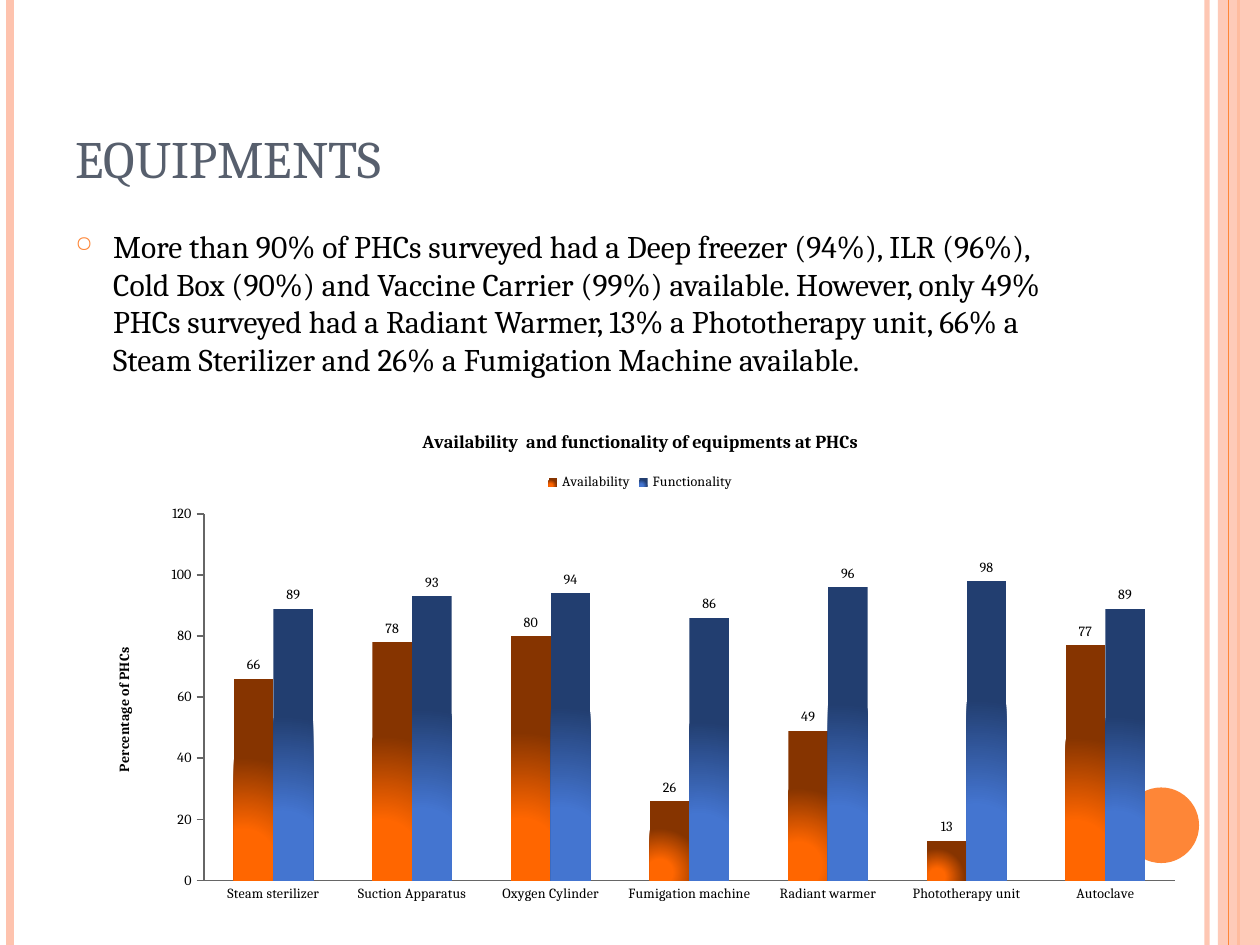
from lxml.etree import SubElement, fromstring
from pptx import Presentation
from pptx.chart.data import CategoryChartData
from pptx.dml.color import RGBColor
from pptx.enum.chart import XL_CHART_TYPE, XL_LABEL_POSITION, XL_LEGEND_POSITION, XL_TICK_MARK
from pptx.enum.shapes import MSO_CONNECTOR, MSO_SHAPE
from pptx.enum.text import MSO_ANCHOR
from pptx.oxml.ns import qn
from pptx.util import Pt

# Content
FONT = "Cambria"
TITLE = "EQUIPMENTS"
BODY = ("More than 90% of PHCs surveyed had a Deep freezer (94%), ILR (96%), Cold Box (90%) "
        "and Vaccine Carrier (99%) available. However, only 49% PHCs surveyed had a Radiant "
        "Warmer, 13% a Phototherapy unit, 66% a Steam Sterilizer and 26% a Fumigation Machine "
        "available.")
CHART_TITLE = "Availability  and functionality of equipments at PHCs"
AXIS_TITLE = "Percentage of PHCs"
CATEGORIES = ["Steam sterilizer", "Suction Apparatus", "Oxygen Cylinder", "Fumigation machine",
              "Radiant warmer", "Phototherapy unit", "Autoclave"]
# name, values, inner and outer gradient colours
SERIES = [("Availability", [66, 78, 80, 26, 49, 13, 77], "FF6600", "863400"),
          ("Functionality", [89, 93, 94, 86, 96, 98, 89], "4475D0", "223E70")]
# x, colour, width, opacity in percent
LINES_BEHIND = [(689.76, "FEC3AE", 3, 93), (5.76, "FEC3AE", 4.5, 100), (707.76, "FE8637", 1.5, 100)]
LINES_FRONT = [(702, "FE8637", 0.75, 100)]
WIDTH, HEIGHT = 720, 540


def color(code):
    return RGBColor.from_string(code)


def set_opacity(element, percent):
    if percent < 100:
        SubElement(element.find(".//" + qn("a:srgbClr")), qn("a:alpha"), val=str(percent * 1000))


def add_rule(x, code, width, opacity):
    line = page.shapes.add_connector(MSO_CONNECTOR.STRAIGHT, Pt(x), Pt(0), Pt(x), Pt(HEIGHT))
    line.line.color.rgb = color(code)
    line.line.width = Pt(width)
    set_opacity(line._element.spPr, opacity)
    SubElement(line._element.spPr, qn("a:effectLst"))


def add_plain_shape(kind, left, top, width, height, code, opacity=100):
    shape = page.shapes.add_shape(kind, Pt(left), Pt(top), Pt(width), Pt(height))
    shape.shadow.inherit = False
    shape.fill.solid()
    shape.fill.fore_color.rgb = color(code)
    shape.line.fill.background()
    set_opacity(shape._element.spPr, opacity)


def style_font(font, size, code="000000", bold=False):
    font.name, font.size, font.bold = FONT, Pt(size), bold
    font.color.rgb = color(code)


def add_text(text, left, top, width, height, size, code="000000", anchor=MSO_ANCHOR.TOP):
    box = page.shapes.add_textbox(Pt(left), Pt(top), Pt(width), Pt(height))
    box.text_frame.word_wrap = True
    box.text_frame.vertical_anchor = anchor
    para = box.text_frame.paragraphs[0]
    span = para.add_run()
    span.text = text
    style_font(span.font, size, code)
    return para


def add_bullet(para, mark, code, percent, indent):
    props = para._p.get_or_add_pPr()
    props.set("marL", str(Pt(indent)))
    props.set("indent", str(-Pt(indent)))
    SubElement(SubElement(props, qn("a:buClr")), qn("a:srgbClr"), val=code)
    SubElement(props, qn("a:buSzPct"), val=str(percent * 1000))
    SubElement(props, qn("a:buChar"), char=mark)


def set_layout(parent, index, **places):
    """Place a chart part by fractions of the chart area."""
    for old in parent.findall(qn("c:layout")):
        parent.remove(old)
    layout = parent.makeelement(qn("c:layout"))
    parent.insert(index, layout)
    manual = SubElement(layout, qn("c:manualLayout"))
    if "w" in places:
        SubElement(manual, qn("c:layoutTarget"), val="inner")
    for mode in ("xMode", "yMode"):
        SubElement(manual, qn("c:" + mode), val="edge")
    for name, value in places.items():
        SubElement(manual, qn("c:" + name), val=str(value))


def fill_radial(series, inner, outer):
    series.format.fill.solid()
    solid = series._element.spPr.find(qn("a:solidFill"))
    stops = "".join(f'<a:gs pos="{place}"><a:srgbClr val="{code}"/></a:gs>'
                    for place, code in ((0, inner), (30000, inner), (100000, outer)))
    gradient = fromstring(
        '<a:gradFill xmlns:a="http://schemas.openxmlformats.org/drawingml/2006/main">'
        f'<a:gsLst>{stops}</a:gsLst><a:path path="circle">'
        '<a:fillToRect l="25000" t="90000" r="75000" b="10000"/></a:path></a:gradFill>')
    solid.getparent().replace(solid, gradient)


def set_title(title, text, size):
    para = title.text_frame.paragraphs[0]
    span = para.add_run()
    span.text = text
    style_font(span.font, size, bold=True)


def add_equipment_chart(left, top, width, height):
    data = CategoryChartData(number_format="0")
    data.categories = CATEGORIES
    for name, values, *_ in SERIES:
        data.add_series(name, values)
    chart = page.shapes.add_chart(XL_CHART_TYPE.COLUMN_CLUSTERED, Pt(left), Pt(top),
                                  Pt(width), Pt(height), data).chart
    style_font(chart.font, 8)
    chart.has_title = True
    set_title(chart.chart_title, CHART_TITLE, 10.5)
    chart.has_legend = True
    chart.legend.position = XL_LEGEND_POSITION.TOP
    chart.legend.include_in_layout = False
    set_layout(chart._chartSpace.chart.plotArea, 0, x=0.108, y=0.207, w=0.872, h=0.728)

    # Axes
    for axis in (chart.category_axis, chart.value_axis):
        axis.has_major_gridlines = False
        axis.format.line.color.rgb = color("666666")
        axis.format.line.width = Pt(1)
    chart.category_axis.major_tick_mark = XL_TICK_MARK.NONE
    values = chart.value_axis
    values.major_tick_mark = XL_TICK_MARK.OUTSIDE
    values.minimum_scale, values.maximum_scale, values.major_unit = 0, 120, 20
    set_title(values.axis_title, AXIS_TITLE, 8)
    title = values.axis_title._element
    title.find(".//" + qn("a:bodyPr")).set("rot", "-5400000")
    set_layout(title, 1, x=0.025, y=0.467)

    # Columns and value labels
    plot = chart.plots[0]
    plot.vary_by_categories = False
    plot.gap_width, plot.overlap = 150, 0
    for series, (_, _, inner, outer) in zip(plot.series, SERIES):
        fill_radial(series, inner, outer)
        labels = series.data_labels
        labels.show_value = True
        labels.number_format, labels.number_format_is_linked = "0", False
        labels.position = XL_LABEL_POSITION.OUTSIDE_END
        style_font(labels.font, 8)


deck = Presentation()
deck.slide_width, deck.slide_height = Pt(WIDTH), Pt(HEIGHT)
page = deck.slides.add_slide(deck.slide_layouts[6])

# Side stripes and disc
for rule in LINES_BEHIND:
    add_rule(*rule)
add_plain_shape(MSO_SHAPE.RECTANGLE, 696, 0, 24, HEIGHT, "FEC3AE", opacity=87)
for rule in LINES_FRONT:
    add_rule(*rule)
add_plain_shape(MSO_SHAPE.OVAL, 642, 450, 43.2, 43.2, "FE8637")

# Heading, bullet and chart
add_text(TITLE, 36, 21.6, 588, 90, 30, "575F6D", MSO_ANCHOR.BOTTOM)
point = add_text(BODY, 36, 126, 588, 384, 18)
point.space_before = Pt(6)
add_bullet(point, "○", "FE8637", 70, 21.6)
add_equipment_chart(48, 234, 636, 288)

deck.save("out.pptx")
